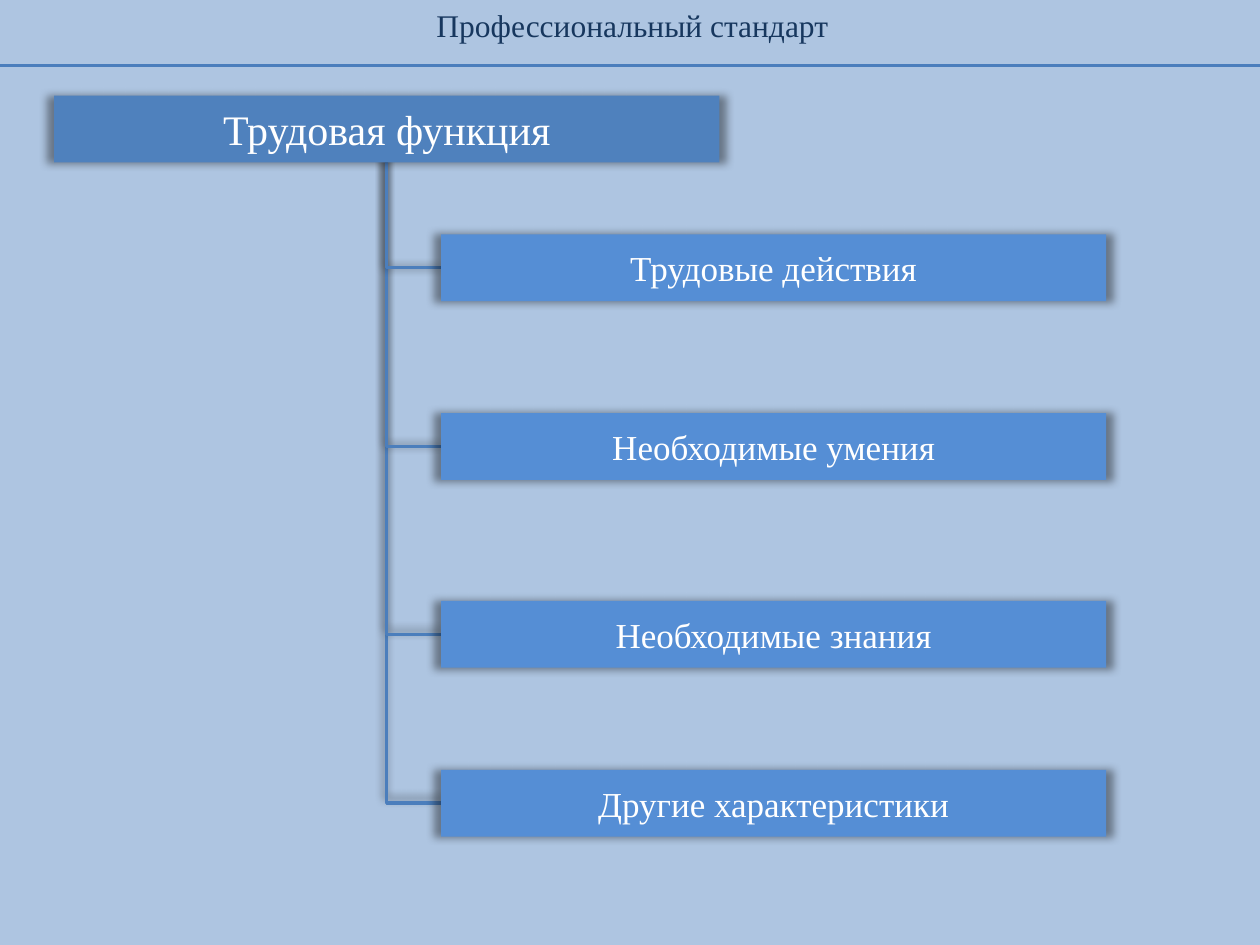
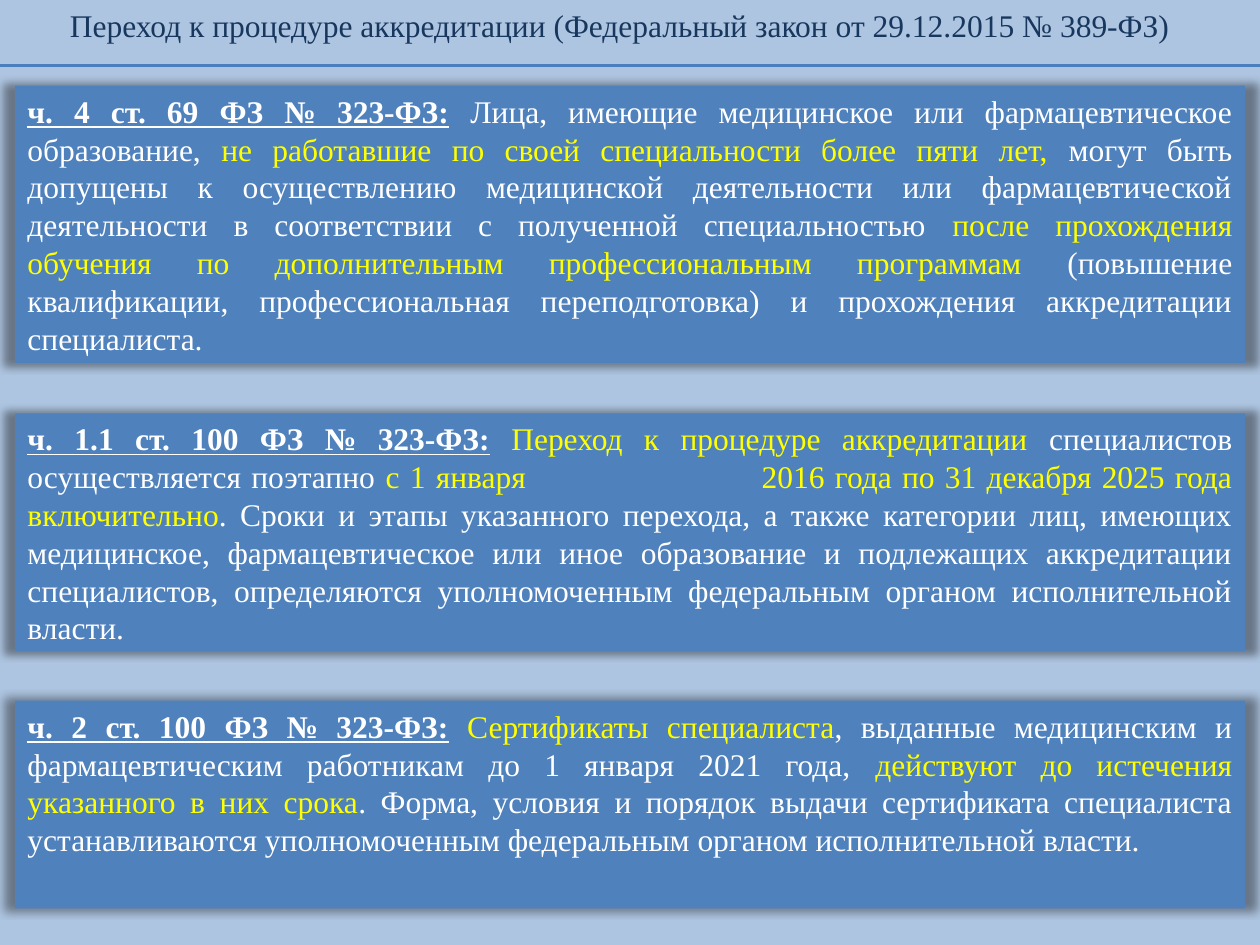
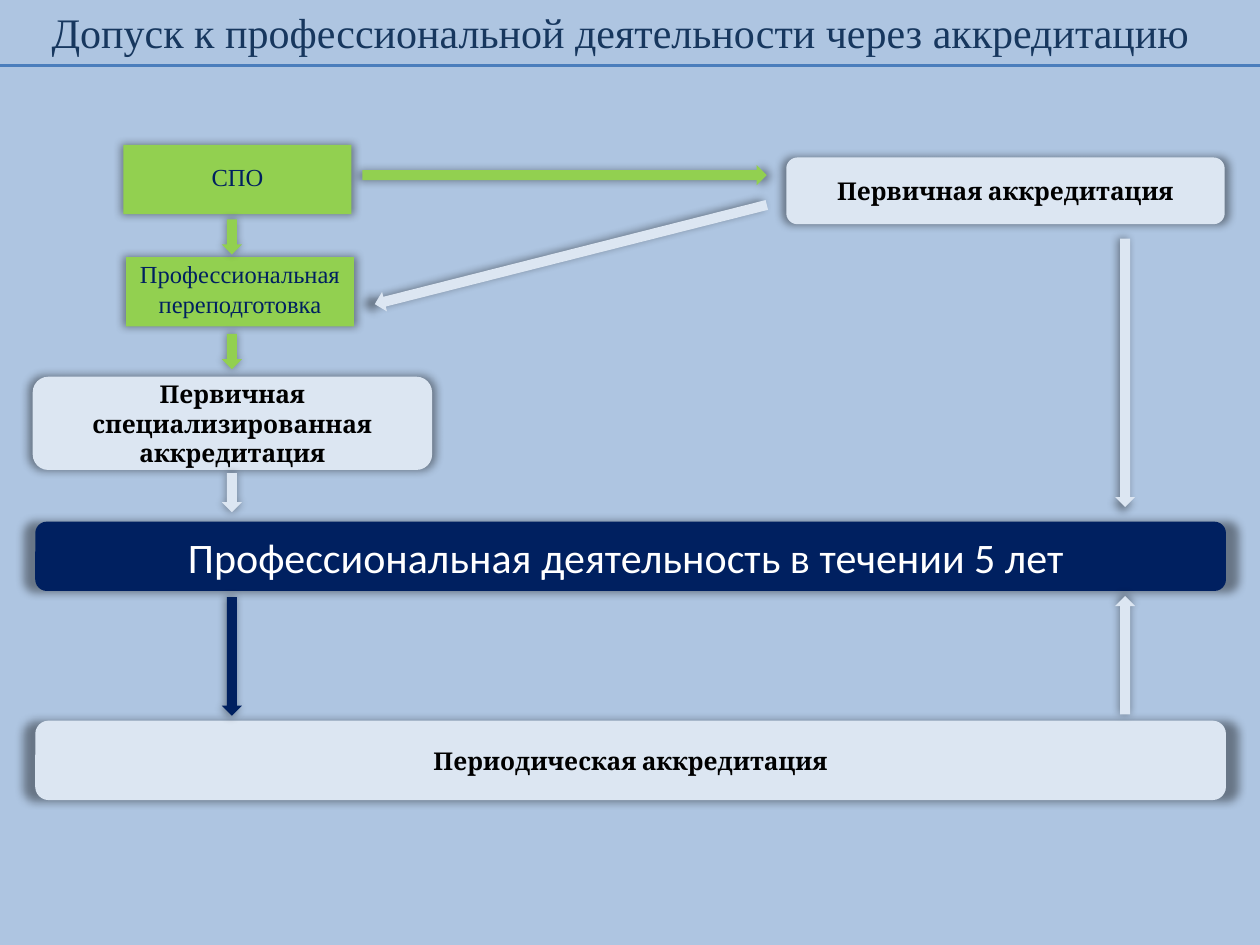
"""Build three slides on professional standards and accreditation."""
from lxml.etree import SubElement
from pptx import Presentation
from pptx.dml.color import RGBColor
from pptx.enum.shapes import MSO_CONNECTOR, MSO_SHAPE
from pptx.enum.text import MSO_ANCHOR, MSO_AUTO_SIZE, PP_ALIGN
from pptx.oxml.ns import qn
from pptx.util import Inches, Pt

COLS, ROWS = 100, 75
SERIF = "Times New Roman"
BACK, NAVY, RULE = "AEC5E1", "17375E", "4B7EBC"
BLUE, SKY, PALE = "4F81BD", "558ED5", "DCE6F2"
GREEN, DEEP, WHITE = "92D050", "002060", "FFFFFF"
BLACK, GOLD = "000000", "FFFF00"


def hue(code):
    return RGBColor.from_string(code)


class Deck:
    def __init__(self):
        self.show = Presentation()
        self.show.slide_width, self.show.slide_height = Inches(10), Inches(7.5)
        self.page = None

    def x(self, cols):
        return round(self.show.slide_width * cols / COLS)

    def y(self, rows):
        return round(self.show.slide_height * rows / ROWS)

    def area(self, left, top, wide, tall):
        return self.x(left), self.y(top), self.x(wide), self.y(tall)

    def slide(self, title, left, wide, tall, size=18):
        self.page = self.show.slides.add_slide(self.show.slide_layouts[6])
        fill = self.page.background.fill
        fill.solid()
        fill.fore_color.rgb = hue(BACK)
        frame = self.page.shapes.add_textbox(*self.area(left, 0, wide, tall)).text_frame
        frame.word_wrap = False
        frame.auto_size = MSO_AUTO_SIZE.SHAPE_TO_FIT_TEXT
        self.label(frame, title, size, NAVY)
        self.line(MSO_CONNECTOR.STRAIGHT, (0, 5.2), (COLS, 5.2), 1.75)

    def label(self, frame, text, size, color, face=SERIF, bold=False):
        para = frame.paragraphs[0]
        para.text = text
        para.alignment = PP_ALIGN.CENTER
        self.style(para.font, size, color, face)
        para.font.bold = bold

    def style(self, font, size, color, face=SERIF):
        font.size, font.name = Pt(size), face
        font.color.rgb = hue(color)

    def glow(self, shape):
        effects = SubElement(shape._element.spPr, qn("a:effectLst"))
        cast = SubElement(effects, qn("a:outerShdw"), blurRad="63500",
                          sx="102000", sy="102000", algn="ctr", rotWithShape="0")
        tint = SubElement(cast, qn("a:srgbClr"), val=BLACK)
        SubElement(tint, qn("a:alpha"), val="40000")

    def line(self, kind, start, end, width):
        line = self.page.shapes.add_connector(
            kind, self.x(start[0]), self.y(start[1]), self.x(end[0]), self.y(end[1]))
        line.line.color.rgb = hue(RULE)
        line.line.width = Pt(width)
        if kind == MSO_CONNECTOR.STRAIGHT:
            SubElement(line._element.spPr, qn("a:effectLst"))
        return line

    def shape(self, kind, area, fill):
        shape = self.page.shapes.add_shape(kind, *self.area(*area))
        shape.fill.solid()
        shape.fill.fore_color.rgb = hue(fill)
        shape.line.fill.background()
        self.glow(shape)
        return shape

    def box(self, text, area, fill, size, color=WHITE, face=SERIF,
            bold=False, kind=MSO_SHAPE.RECTANGLE, inset=0.5):
        box = self.shape(kind, area, fill)
        frame = box.text_frame
        frame.word_wrap = True
        frame.vertical_anchor = MSO_ANCHOR.MIDDLE
        frame.margin_top = self.y(inset)
        self.label(frame, text, size, color, face, bold)
        return box

    def pill(self, text, area, fill=PALE, size=14, color=BLACK, face="Cambria", bold=True):
        self.box(text, area, fill, size, color, face, bold, MSO_SHAPE.ROUNDED_RECTANGLE)

    def branch(self, head, child):
        link = self.line(MSO_CONNECTOR.ELBOW, (35, 20), (30.7, 12.9), 2)
        link.begin_connect(child, 1)
        link.end_connect(head, 2)
        link._element.spPr.find(qn("a:prstGeom")).set("prst", "bentConnector2")
        self.glow(link)
        self.page.shapes._spTree.insert(2, link._element)

    def arrow(self, x, y, span, fill, turn=90):
        thick = 1.6
        area = x - span / 2, y - thick / 2, span, thick
        self.shape(MSO_SHAPE.RIGHT_ARROW, area, fill).rotation = turn

    def clause(self, head, text, top, tall, stop=57.5):
        frame = self.shape(MSO_SHAPE.RECTANGLE, (1.2, top, 97.6, tall), BLUE).text_frame
        frame.word_wrap = True
        frame.vertical_anchor = MSO_ANCHOR.TOP
        para = frame.paragraphs[0]
        para.alignment = PP_ALIGN.JUSTIFY
        if "\t" in text:
            tabs = SubElement(para._p.get_or_add_pPr(), qn("a:tabLst"))
            SubElement(tabs, qn("a:tab"), pos=str(self.x(stop)), algn="l")
        self.style(para.font, 18, WHITE)
        run = para.add_run()
        run.text = head
        run.font.bold = run.font.underline = True
        for turn, part in enumerate((" " + text).split("*")):
            run = para.add_run()
            run.text = part
            run.font.color.rgb = hue(GOLD if turn % 2 else WHITE)


def labour(deck):
    deck.slide("Профессиональный стандарт", 33.5, 33.4, 4)
    head = deck.box("Трудовая функция", (4.3, 7.6, 52.8, 5.3), BLUE, 24)
    for text, top in (("Трудовые действия", 18.6), ("Необходимые умения", 32.8),
                      ("Необходимые знания", 47.7), ("Другие характеристики", 61.1)):
        deck.branch(head, deck.box(text, (35, top, 52.8, 5.3), SKY, 20))


def law(deck):
    deck.slide("Переход к процедуре аккредитации (Федеральный закон от 29.12.2015 № 389-ФЗ)",
               4.1, 90.2, 7.1)
    deck.clause(
        "ч. 4 ст. 69 ФЗ № 323-ФЗ:",
        "Лица, имеющие медицинское или фармацевтическое образование, "
        "*не работавшие по своей специальности более пяти лет,* могут быть допущены "
        "к осуществлению медицинской деятельности или фармацевтической деятельности "
        "в соответствии с полученной специальностью *после прохождения обучения "
        "по дополнительным профессиональным программам *(повышение квалификации, "
        "профессиональная переподготовка) и прохождения аккредитации специалиста.",
        6.8, 22)
    deck.clause(
        "ч. 1.1 ст. 100 ФЗ № 323-ФЗ:",
        "*Переход к процедуре аккредитации *специалистов осуществляется поэтапно "
        "*с 1 января\t2016 года по 31 декабря 2025 года включительно*. Сроки и этапы "
        "указанного перехода, а также категории лиц, имеющих медицинское, "
        "фармацевтическое или иное образование и подлежащих аккредитации специалистов, "
        "определяются уполномоченным федеральным органом исполнительной власти.",
        32.8, 18.9)
    deck.clause(
        "ч. 2 ст. 100 ФЗ № 323-ФЗ:",
        "*Сертификаты специалиста*, выданные медицинским и фармацевтическим работникам "
        "до 1 января 2021 года, *действуют до истечения указанного в них срока*. Форма, "
        "условия и порядок выдачи сертификата специалиста устанавливаются "
        "уполномоченным федеральным органом исполнительной власти.",
        55.6, 16.5)


def access(deck):
    deck.slide("Допуск к профессиональной деятельности через аккредитацию", 2.5, 93.5, 5, 24)
    deck.pill("Первичная специализированная аккредитация", (2.6, 29.9, 31.7, 7.4))
    deck.pill("Периодическая аккредитация", (2.8, 57.2, 94.5, 6.3))
    deck.pill("Первичная аккредитация", (62.4, 12.5, 34.8, 5.3))
    deck.pill("Профессиональная деятельность в течении 5 лет ", (2.8, 41.4, 94.5, 5.5),
              DEEP, 24, WHITE, "Calibri", False)
    for text, left, top in (("СПО", 9.8, 11.5), ("Профессиональная переподготовка", 10, 20.4)):
        deck.box(text, (left, top, 18.1, 5.5), GREEN, 14, DEEP, inset=0)
    for y, span, fill in ((18.8, 2.8, GREEN), (27.9, 2.8, GREEN),
                          (39.1, 3.1, PALE), (52.1, 9.4, DEEP)):
        deck.arrow(18.4, y, span, fill)
    deck.arrow(89.3, 29.6, 21.3, PALE)
    deck.arrow(89.3, 52, 9.4, PALE, 270)
    deck.arrow(44.8, 13.9, 32.1, GREEN, 0)
    deck.arrow(45.3, 20.2, 32.1, PALE, 165.8)


def main():
    deck = Deck()
    for build in (labour, law, access):
        build(deck)
    deck.show.save("out.pptx")


if __name__ == "__main__":
    main()
